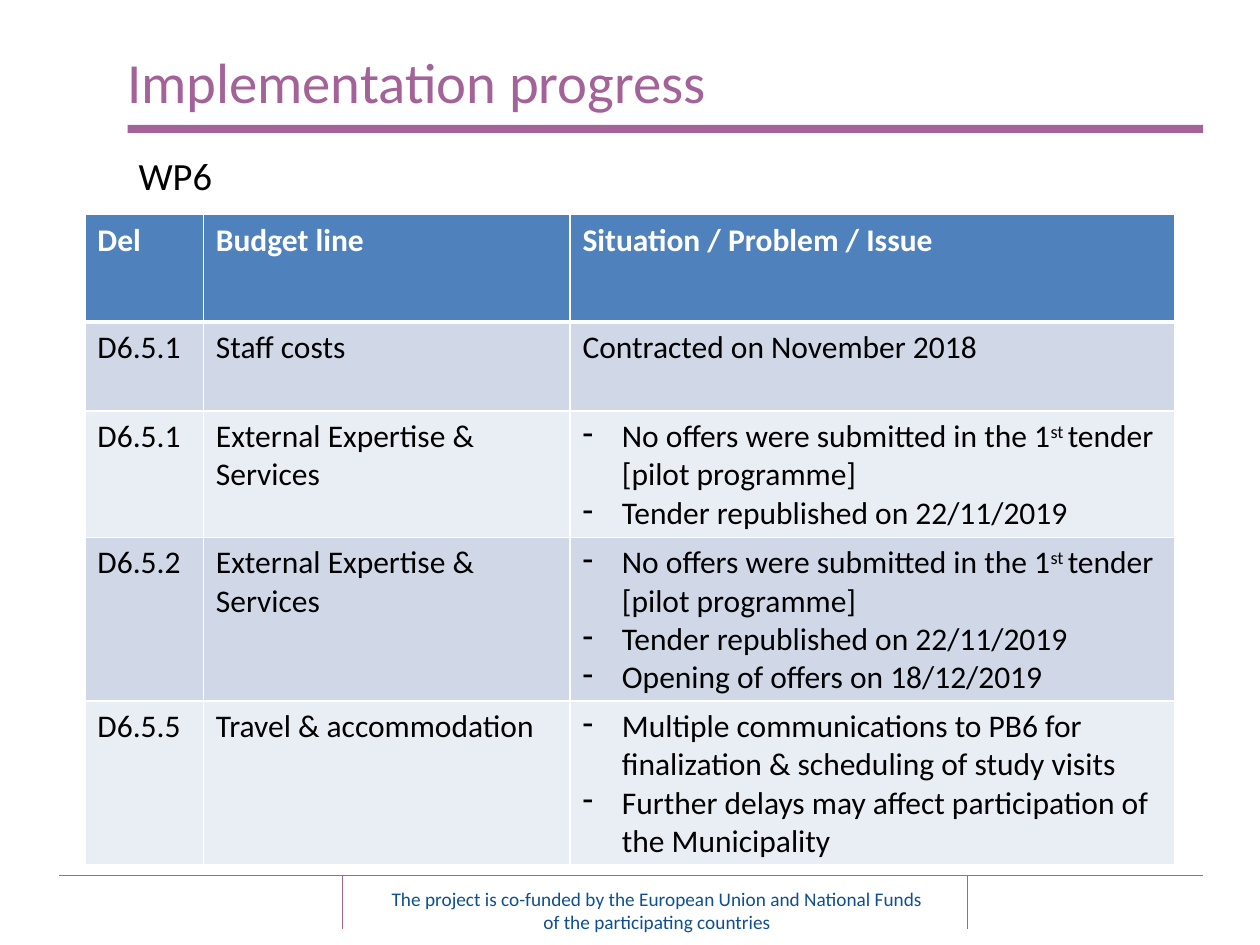
from dataclasses import dataclass

import pptx
import pptx.dml.color
import pptx.enum.shapes
import pptx.enum.text
import pptx.oxml.ns
import pptx.util
from lxml import etree

Pt = pptx.util.Pt
Align = pptx.enum.text.PP_ALIGN
Anchor = pptx.enum.text.MSO_ANCHOR
qn = pptx.oxml.ns.qn

COLOURS = {
    "plum": "A36298",
    "navy": "0F4F8F",
    "black": "000000",
    "white": "FFFFFF",
    "header": "4F81BD",
    "band_dark": "D0D8E8",
    "band_light": "E9EDF4",
}
FONT = "Calibri"
BULLET_INDENT = 22.5
COLUMN_WIDTHS = (67.7, 209.5, 345.6)
ROW_HEIGHTS = (61.2, 51.1, 51.1, 51.1, 51.1)
HEADINGS = ("Del", "Budget line", "Situation / Problem / Issue")
# The ordinal ending between carets is raised.
NO_OFFERS = "No offers were submitted in the 1^st ^tender [pilot programme]"
REPUBLISHED = "Tender republished on 22/11/2019"


@dataclass
class Deliverable:
    code: str
    budget_line: str
    issues: tuple[str, ...]
    bulleted: bool = True


@dataclass
class Rule:
    start: tuple[float, float]
    end: tuple[float, float]


DELIVERABLES = (
    Deliverable("D6.5.1", "Staff costs", ("Contracted on November 2018",), False),
    Deliverable("D6.5.1", "External Expertise & Services", (NO_OFFERS, REPUBLISHED)),
    Deliverable("D6.5.2", "External Expertise & Services",
                (NO_OFFERS, REPUBLISHED, "Opening of offers on 18/12/2019")),
    Deliverable("D6.5.5", "Travel & accommodation",
                ("Multiple communications to PB6 for finalization & scheduling of study visits",
                 "Further delays may affect participation of the Municipality")),
)
FOOTER_RULES = (
    Rule((33.8, 500.4), (687.6, 500.4)),
    Rule((195.8, 500.4), (195.8, 530.6)),
    Rule((553, 500.4), (553, 530.6)),
)


def colour(name: str) -> pptx.dml.color.RGBColor:
    return pptx.dml.color.RGBColor.from_string(COLOURS[name])


def style_paragraph(para, size: float, colour_name: str, bold: bool = False) -> None:
    para.font.name = FONT
    para.font.size = Pt(size)
    para.font.bold = bold
    para.font.color.rgb = colour(colour_name)


def add_text(slide, left: float, top: float, width: float, height: float, text: str,
             size: float, colour_name: str, align=Align.LEFT, anchor=Anchor.TOP):
    box = slide.shapes.add_textbox(Pt(left), Pt(top), Pt(width), Pt(height))
    frame = box.text_frame
    frame.word_wrap = True
    frame.vertical_anchor = anchor
    para = frame.paragraphs[0]
    para.text = text
    para.alignment = align
    style_paragraph(para, size, colour_name)
    return box


def add_rule(slide, rule: Rule) -> None:
    line = slide.shapes.add_connector(
        pptx.enum.shapes.MSO_CONNECTOR.STRAIGHT, *map(Pt, rule.start + rule.end))
    line.line.color.rgb = colour("plum")
    line.line.width = Pt(0.75)
    etree.SubElement(line._element.spPr, qn("a:effectLst"))


def add_dash(para) -> None:
    properties = para._p.get_or_add_pPr()
    properties.set("marL", str(Pt(BULLET_INDENT)))
    properties.set("indent", str(-Pt(BULLET_INDENT)))
    etree.SubElement(properties, qn("a:buChar")).set("char", "-")


def set_borders(cell, bottom_width: float) -> None:
    properties = cell._tc.get_or_add_tcPr()
    widths = {"lnL": 1, "lnR": 1, "lnT": 1, "lnB": bottom_width}
    for position, (side, width) in enumerate(widths.items()):
        border = etree.Element(qn(f"a:{side}"), w=str(Pt(width)))
        fill = etree.SubElement(border, qn("a:solidFill"))
        etree.SubElement(fill, qn("a:srgbClr"), val=COLOURS["white"])
        properties.insert(position, border)


def fill_cell(cell, lines: tuple[str, ...], fill: str, is_header: bool = False,
              bulleted: bool = False) -> None:
    cell.fill.solid()
    cell.fill.fore_color.rgb = colour(fill)
    set_borders(cell, 3 if is_header else 1)
    frame = cell.text_frame
    for index, line in enumerate(lines):
        para = frame.add_paragraph() if index else frame.paragraphs[0]
        if bulleted:
            add_dash(para)
        style_paragraph(para, 18, "white" if is_header else "black", is_header)
        for part, text in enumerate(line.split("^")):
            span = para.add_run()
            span.text = text
            if part % 2:
                span._r.get_or_add_rPr().set("baseline", "30000")


def add_progress_table(slide) -> None:
    table = slide.shapes.add_table(
        len(ROW_HEIGHTS), len(COLUMN_WIDTHS), Pt(48.5), Pt(122.7),
        Pt(sum(COLUMN_WIDTHS)), Pt(sum(ROW_HEIGHTS))).table
    for column, width in zip(table.columns, COLUMN_WIDTHS):
        column.width = Pt(width)
    for row, height in zip(table.rows, ROW_HEIGHTS):
        row.height = Pt(height)
    for column, heading in enumerate(HEADINGS):
        fill_cell(table.cell(0, column), (heading,), "header", is_header=True)
    for row, item in enumerate(DELIVERABLES, start=1):
        band = "band_dark" if row % 2 else "band_light"
        fill_cell(table.cell(row, 0), (item.code,), band)
        fill_cell(table.cell(row, 1), (item.budget_line,), band)
        fill_cell(table.cell(row, 2), item.issues, band, bulleted=item.bulleted)


def main() -> None:
    deck = pptx.Presentation()
    deck.slide_width, deck.slide_height = Pt(720), Pt(540)
    slide = deck.slides.add_slide(deck.slide_layouts[6])

    for rule in FOOTER_RULES:
        add_rule(slide, rule)
    bar = slide.shapes.add_shape(pptx.enum.shapes.MSO_SHAPE.RECTANGLE,
                                 Pt(73), Pt(71.4), Pt(614.6), Pt(4.6))
    bar.shadow.inherit = False
    bar.fill.solid()
    bar.fill.fore_color.rgb = colour("plum")
    bar.line.fill.background()

    add_text(slide, 198, 503.3, 355, 33.8,
             "The project is co-funded by the European Union and National Funds\v"
             "of the participating countries", 11, "navy", Align.CENTER)
    add_text(slide, 65.5, 21.6, 618.5, 49.7, "Implementation progress",
             32.4, "plum", anchor=Anchor.MIDDLE)
    work_package = add_text(slide, 36, 83.5, 648, 388, "WP6", 22, "black")
    work_package.text_frame.margin_left = Pt(43.2)
    add_progress_table(slide)
    deck.save("out.pptx")


if __name__ == "__main__":
    main()
